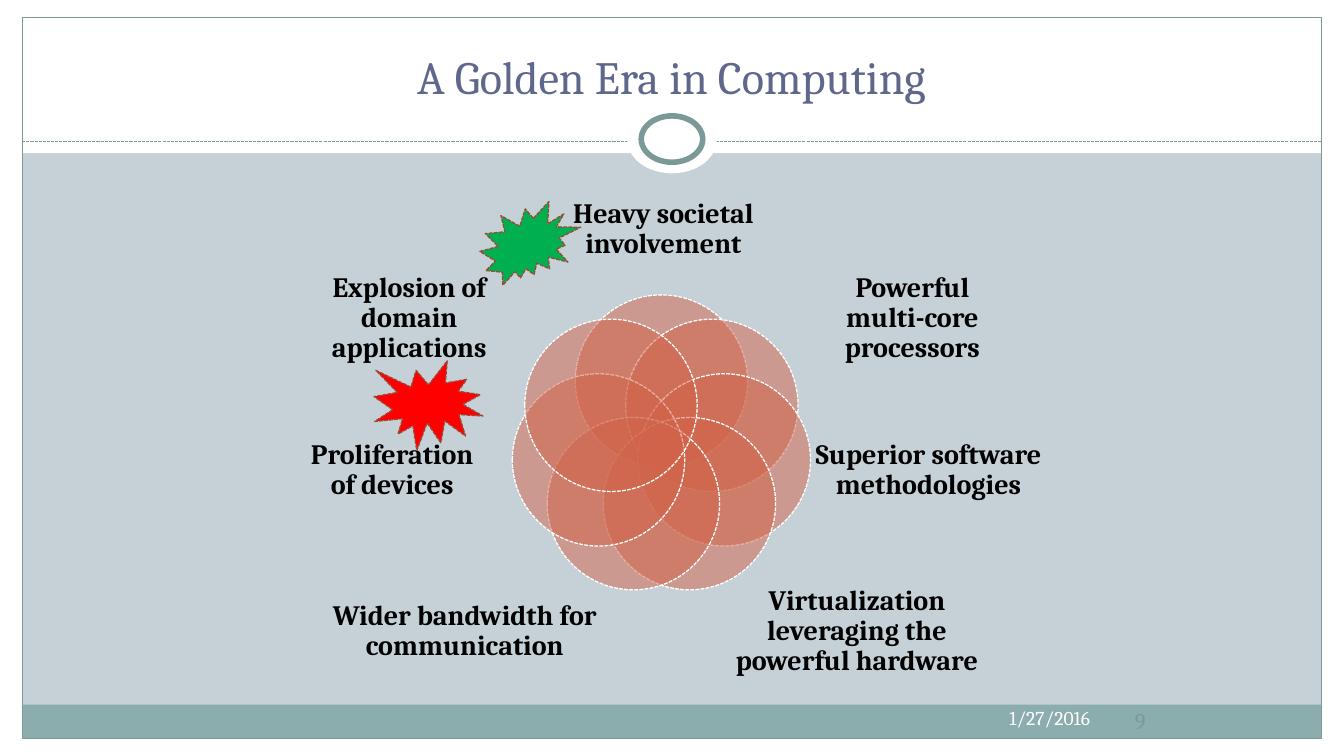
import math

from pptx import Presentation
from pptx.dml.color import RGBColor
from pptx.enum.dml import MSO_LINE
from pptx.enum.shapes import MSO_CONNECTOR, MSO_SHAPE
from pptx.enum.text import MSO_ANCHOR, PP_ALIGN
from pptx.oxml.ns import qn
from pptx.util import Pt
from lxml import etree

RECT, OVAL = MSO_SHAPE.RECTANGLE, MSO_SHAPE.OVAL
RED_SEAL, GREEN_SEAL = MSO_SHAPE.EXPLOSION1, MSO_SHAPE.EXPLOSION2
LEFT, CENTER, RIGHT = PP_ALIGN.LEFT, PP_ALIGN.CENTER, PP_ALIGN.RIGHT
TOP, MIDDLE, BOTTOM = MSO_ANCHOR.TOP, MSO_ANCHOR.MIDDLE, MSO_ANCHOR.BOTTOM
DASH = MSO_LINE.SQUARE_DOT

PX = 9144  # EMU, 100 px to the inch
WIDTH, HEIGHT = 1333, 750
FONT = "Cambria"
COLORS = {
    "background": "C5D1D7", "white": "FFFFFF", "black": "000000",
    "footer": "8CADAE", "frame": "7C999A", "title": "5F688B",
    "petal": "D16349", "seal_line": "9B4936", "red": "FF0000", "green": "00B050",
}

TITLE = ("A Golden Era in Computing", (44, 25, 1244, 83))
DATE = ("1/27/2016", (863, 695, 228, 40))
PAGE_NUMBER = ("9", (1101, 695, 60, 40))
# Clockwise from the top, one label for each petal
DRIVERS = [
    ("Heavy societal involvement", (560, 175, 196, 105)),
    ("Powerful multi-core processors", (812, 258, 186, 116)),
    ("Superior software methodologies", (804, 405, 234, 123)),
    ("Virtualization leveraging the powerful hardware", (715, 570, 270, 113)),
    ("Wider bandwidth for communication", (330, 570, 262, 113)),
    ("Proliferation of devices", (298, 405, 182, 123)),
    ("Explosion of domain applications", (321, 258, 170, 116)),
]
RING_X, RING_Y, RING_RADIUS, PETAL_SIZE = 656, 442, 64, 171

EDGE, FRAME_TOP, FRAME_BOTTOM, HEADER = 22, 17, 733, 152
FRAME_WIDTH = WIDTH - 2 * EDGE
MARGINS = [
    (0, FRAME_BOTTOM, WIDTH, HEIGHT - FRAME_BOTTOM),
    (0, 0, WIDTH, HEADER),
    (0, 0, EDGE, HEIGHT),
    (WIDTH - EDGE, 0, EDGE, HEIGHT),
]
SEALS = [
    (RED_SEAL, (371, 358, 108, 89), "red"),
    (GREEN_SEAL, (476, 200, 100, 83), "green"),
]


def color(name):
    return RGBColor.from_string(COLORS[name])


def emu(lengths):
    return [round(length * PX) for length in lengths]


def style_line(line, name, width, dashed=False):
    line.color.rgb = color(name)
    line.width = Pt(width)
    if dashed:
        line.dash_style = DASH


def add_figure(page, kind, area, fill=None, line=None, width=0.75, dashed=False):
    figure = page.shapes.add_shape(kind, *emu(area))
    figure.shadow.inherit = False
    if fill:
        figure.fill.solid()
        figure.fill.fore_color.rgb = color(fill)
    else:
        figure.fill.background()
    if line:
        style_line(figure.line, line, width, dashed)
    else:
        figure.line.fill.background()
    return figure


def add_text(page, text, area, size, name, align, anchor, bold=False, tight=False):
    """Add one paragraph; tight drops the insets and narrows the line spacing."""
    box = page.shapes.add_textbox(*emu(area))
    frame = box.text_frame
    frame.word_wrap = True
    frame.vertical_anchor = anchor
    para = frame.paragraphs[0]
    para.alignment = align
    if tight:
        frame.margin_left = frame.margin_right = 0
        frame.margin_top = frame.margin_bottom = 0
        para.line_spacing = 0.9
    span = para.add_run()
    span.text = text
    span.font.name = FONT
    span.font.size = Pt(size)
    span.font.bold = bold
    span.font.color.rgb = color(name)


def add_backdrop(page):
    page.background.fill.solid()
    page.background.fill.fore_color.rgb = color("background")
    for area in MARGINS:
        add_figure(page, RECT, area, "white")
    add_figure(page, RECT, (EDGE, 699, FRAME_WIDTH, 34), "footer")
    add_figure(page, RECT, (EDGE, FRAME_TOP, FRAME_WIDTH, FRAME_BOTTOM - FRAME_TOP),
               line="frame")
    divider = page.shapes.add_connector(
        MSO_CONNECTOR.STRAIGHT, *emu((EDGE, 140, WIDTH - EDGE, 140)))
    style_line(divider.line, "frame", 0.75, dashed=True)
    etree.SubElement(divider.element.spPr, qn("a:effectLst"))
    add_figure(page, OVAL, (622, 105, 89, 67), "white")
    add_figure(page, OVAL, (636, 115, 61, 46), "white", "frame", 4)


def add_petals(page):
    for index, (label, area) in enumerate(DRIVERS):
        angle = 2 * math.pi * index / len(DRIVERS)
        left = RING_X + RING_RADIUS * math.sin(angle) - PETAL_SIZE / 2
        top = RING_Y - RING_RADIUS * math.cos(angle) - PETAL_SIZE / 2
        petal = add_figure(page, OVAL, (left, top, PETAL_SIZE, PETAL_SIZE),
                           "petal", "white", 0.9, dashed=True)
        tint = petal.element.spPr.find(qn("a:solidFill"))[0]
        etree.SubElement(tint, qn("a:alpha"), val="50000")
        add_text(page, label, area, 20, "black", CENTER, MIDDLE, bold=True, tight=True)


def main():
    deck = Presentation()
    deck.slide_width, deck.slide_height = emu((WIDTH, HEIGHT))
    page = deck.slides.add_slide(deck.slide_layouts[6])
    add_backdrop(page)
    add_petals(page)
    add_text(page, *DATE, 14, "white", RIGHT, TOP)
    add_text(page, *PAGE_NUMBER, 16, "frame", CENTER, MIDDLE)
    add_text(page, *TITLE, 33, "title", CENTER, BOTTOM)
    for kind, area, fill in SEALS:
        add_figure(page, kind, area, fill, "seal_line", 0.9, dashed=True)
    deck.save("out.pptx")


if __name__ == "__main__":
    main()
